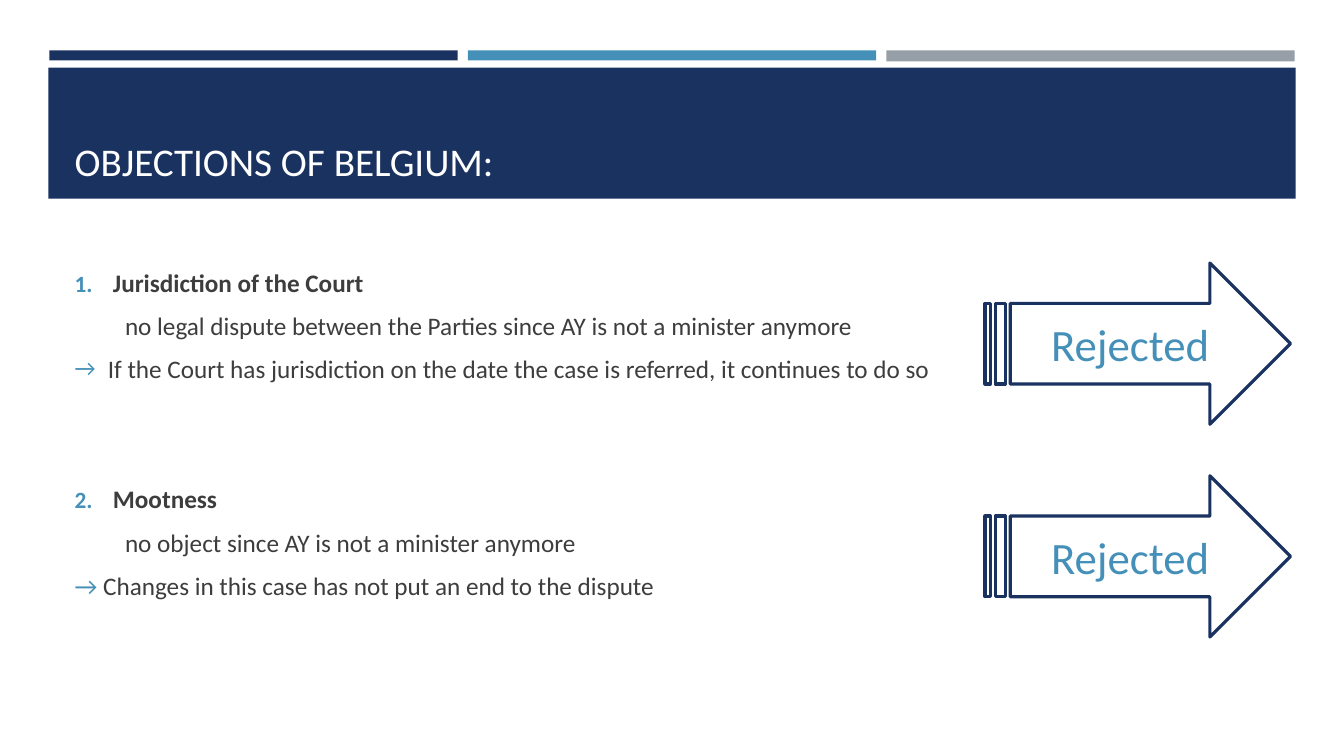
from lxml.etree import SubElement
from pptx import Presentation
from pptx.dml.color import RGBColor
from pptx.enum.shapes import MSO_SHAPE
from pptx.enum.text import MSO_ANCHOR, MSO_AUTO_SIZE, PP_ALIGN
from pptx.oxml.ns import qn
from pptx.util import Inches, Pt

NAVY = RGBColor(0x1A, 0x32, 0x60)
BLUE = RGBColor(0x45, 0x90, 0xB8)
GREY = RGBColor(0x96, 0x9F, 0xA7)
DARK = RGBColor(0x3D, 0x3D, 0x3D)
WHITE = RGBColor(0xFF, 0xFF, 0xFF)


def add_span(para, text, size, color, bold=False):
    span = para.add_run()
    span.text = text
    span.font.name = "Calibri"
    span.font.size = Pt(size)
    span.font.bold = bold
    span.font.color.rgb = color


def set_bullet(para, left, hanging, kind, **attributes):
    """Set the indents in inches and a bullet element: buNone, buChar or buAutoNum."""
    properties = para._p.get_or_add_pPr()
    properties.set("marL", str(Inches(left)))
    properties.set("indent", str(-Inches(hanging)))
    if kind != "buNone":
        color = SubElement(properties, qn("a:buClr"))
        SubElement(color, qn("a:srgbClr"), val=str(BLUE))
        SubElement(properties, qn("a:buSzPct"), val="92000")
        SubElement(properties, qn("a:buFont"), typeface="Calibri")
    SubElement(properties, qn("a:" + kind), **attributes)


deck = Presentation()
deck.slide_width = Inches(13.33)
deck.slide_height = Inches(7.5)
page = deck.slides.add_slide(deck.slide_layouts[1])
title, body = page.placeholders

# Header bars and title band
header = [
    (0.49, 0.5, 4.05, 0.1, NAVY),
    (4.64, 0.5, 4.05, 0.1, BLUE),
    (8.79, 0.5, 4.05, 0.11, GREY),
    (0.48, 0.67, 12.37, 1.3, NAVY),
]
for left, top, width, height, color in header:
    band = page.shapes.add_shape(
        MSO_SHAPE.RECTANGLE, Inches(left), Inches(top), Inches(width), Inches(height)
    )
    band.shadow.inherit = False
    band.fill.solid()
    band.fill.fore_color.rgb = color
    band.line.fill.background()

# Title, brought in front of the band
band.element.addnext(title.element)
title.left, title.top = Inches(0.64), Inches(0.77)
title.width, title.height = Inches(12.06), Inches(1.11)
title.text_frame.vertical_anchor = MSO_ANCHOR.BOTTOM
title.text_frame.auto_size = MSO_AUTO_SIZE.NONE
para = title.text_frame.paragraphs[0]
para.alignment = PP_ALIGN.LEFT
add_span(para, "OBJECTIONS OF BELGIUM:", 28, WHITE)

# Objections and the answers to them
title.element.addnext(body.element)
body.left, body.top = Inches(0.64), Inches(2.38)
body.width, body.height = Inches(12.06), Inches(4.79)
frame = body.text_frame
frame.vertical_anchor = MSO_ANCHOR.TOP
frame.auto_size = MSO_AUTO_SIZE.NONE
frame.margin_top = Inches(0.27)

number = {"type": "arabicPeriod"}
objections = [
    ([("Jurisdiction of the Court", DARK)], True, 3.2, (0.38, 0.38, "buAutoNum"), number),
    ([("no legal dispute between the Parties since AY is not a minister anymore", DARK)],
     False, 3.2, (0.5, 0, "buNone"), {}),
    ([("If the Court has jurisdiction on the date the case is referred, "
       "it continues to do so", DARK)],
     False, 3.2, (0.33, 0.33, "buChar"), {"char": "→"}),
    ([("Mootness", DARK)], True, 65.5, (0.38, 0.38, "buAutoNum"), {**number, "startAt": "2"}),
    ([("no object since AY is not a minister anymore", DARK)],
     False, 3.2, (0.5, 0, "buNone"), {}),
    ([("→", BLUE), (" Changes in this case has not put an end to the dispute", DARK)],
     False, 3.2, (0, 0, "buNone"), {}),
]
for index, (spans, bold, before, bullet, attributes) in enumerate(objections):
    para = frame.add_paragraph() if index else frame.paragraphs[0]
    para.space_before = Pt(before)
    para.space_after = Pt(6)
    set_bullet(para, *bullet, **attributes)
    for text, color in spans:
        add_span(para, text, 18, color, bold)

# Verdict arrows
for top in (2.61, 4.72):
    arrow = page.shapes.add_shape(
        MSO_SHAPE.STRIPED_RIGHT_ARROW, Inches(9.77), Inches(top), Inches(3.03), Inches(1.6)
    )
    arrow.shadow.inherit = False
    arrow.fill.background()
    arrow.line.color.rgb = NAVY
    arrow.line.width = Pt(2.25)
    arrow.text_frame.vertical_anchor = MSO_ANCHOR.MIDDLE
    para = arrow.text_frame.paragraphs[0]
    para.alignment = PP_ALIGN.CENTER
    add_span(para, "Rejected", 32, BLUE)

deck.save("out.pptx")
